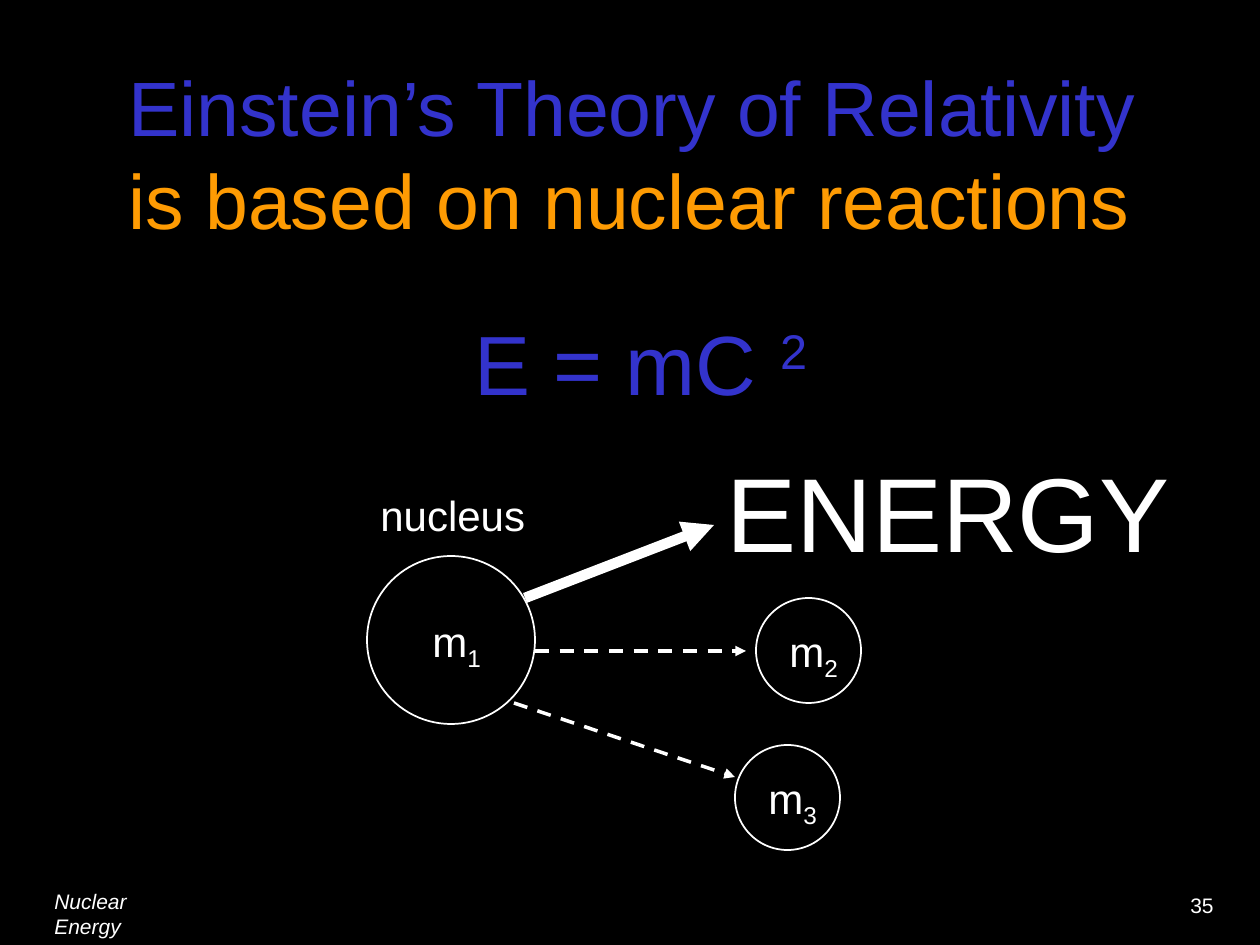
from pptx import Presentation
from pptx import util as u
from pptx.dml.color import RGBColor
from pptx.enum import dml, shapes, text
from pptx.oxml import parse_xml
from pptx.oxml.ns import nsdecls, qn

PX = u.Inches(1) // 126
COLORS = {"black": "000000", "white": "FFFFFF", "blue": "3333CC", "orange": "FE9B03"}
FONT = "Arial"

# Text: box in px, size in pt, runs of (words, colour, baseline in 1/1000 %), options
TEXTS = [
    ((1178, 886, 50, 38), 12, [("35", "white", 0)], {"wrap": False}),
    ((42, 882, 150, 38), 12, [("Nuclear Energy", "white", 0)], {"italic": True}),
    ((116, 42, 1071, 220), 44,
     [("Einstein’s Theory of Relativity ", "blue", 0),
      ("is based on nuclear reactions", "orange", 0)],
     {"anchor": text.MSO_ANCHOR.MIDDLE}),
    ((462, 305, 378, 113), 48, [("E = mC ", "blue", 0), ("2", "blue", 30000)], {}),
    ((368, 483, 199, 63), 24, [("nucleus", "white", 0)], {}),
    ((714, 441, 504, 139), 60, [("ENERGY", "white", 0)], {}),
]

# Masses: subscript, circle left, top and diameter, label left and top
MASSES = [
    ("1", (367, 556, 168), (420, 609)),
    ("2", (756, 598, 105), (777, 619)),
    ("3", (735, 745, 105), (756, 766)),
]
LABEL_SIZE = (105, 63)

# Arrows: from, to, width in pt, dashed
ARROWS = [
    ((525, 598), (714, 525), 6, False),
    ((535, 651), (746, 651), 2, True),
    ((514, 703), (735, 777), 2, True),
]


def px(*lengths):
    return [u.Emu(length * PX) for length in lengths]


def rgb(name):
    return RGBColor.from_string(COLORS[name])


def add_text(slide, box, size, runs, options):
    frame = slide.shapes.add_textbox(*px(*box)).text_frame
    frame.word_wrap = options.get("wrap", True)
    frame.vertical_anchor = options.get("anchor", text.MSO_ANCHOR.TOP)
    look = {"name": FONT, "size": u.Pt(size), "italic": options.get("italic", False)}
    for words, color, baseline in runs:
        run = frame.paragraphs[0].add_run()
        run.text = words
        for key, value in look.items():
            setattr(run.font, key, value)
        run.font.color.rgb = rgb(color)
        if baseline:
            run._r.get_or_add_rPr().set("baseline", str(baseline))


def add_mass(slide, subscript, circle, label):
    left, top, diameter = circle
    nucleus = slide.shapes.add_shape(
        shapes.MSO_SHAPE.OVAL, *px(left, top, diameter, diameter))
    nucleus.shadow.inherit = False
    nucleus.fill.background()
    nucleus.line.color.rgb = rgb("white")
    nucleus.line.width = u.Pt(1)
    runs = [("m", "white", 0), (subscript, "white", -25000)]
    add_text(slide, (*label, *LABEL_SIZE), 24, runs, {})


def add_arrow(slide, start, end, width, dashed):
    arrow = slide.shapes.add_connector(
        shapes.MSO_CONNECTOR.STRAIGHT, *px(*start, *end))
    arrow.line.color.rgb = rgb("white")
    arrow.line.width = u.Pt(width)
    if dashed:
        arrow.line.dash_style = dml.MSO_LINE.DASH
    properties = arrow._element.spPr
    head = parse_xml(f'<a:tailEnd {nsdecls("a")} type="triangle"/>')
    properties.find(qn("a:ln")).append(head)
    properties.append(parse_xml(f'<a:effectLst {nsdecls("a")}/>'))


def main():
    deck = Presentation()
    deck.slide_width, deck.slide_height = px(1260, 945)
    slide = deck.slides.add_slide(deck.slide_layouts[6])
    slide.background.fill.solid()
    slide.background.fill.fore_color.rgb = rgb("black")
    for item in TEXTS:
        add_text(slide, *item)
    for mass in MASSES:
        add_mass(slide, *mass)
    for arrow in ARROWS:
        add_arrow(slide, *arrow)
    deck.save("out.pptx")


if __name__ == "__main__":
    main()
